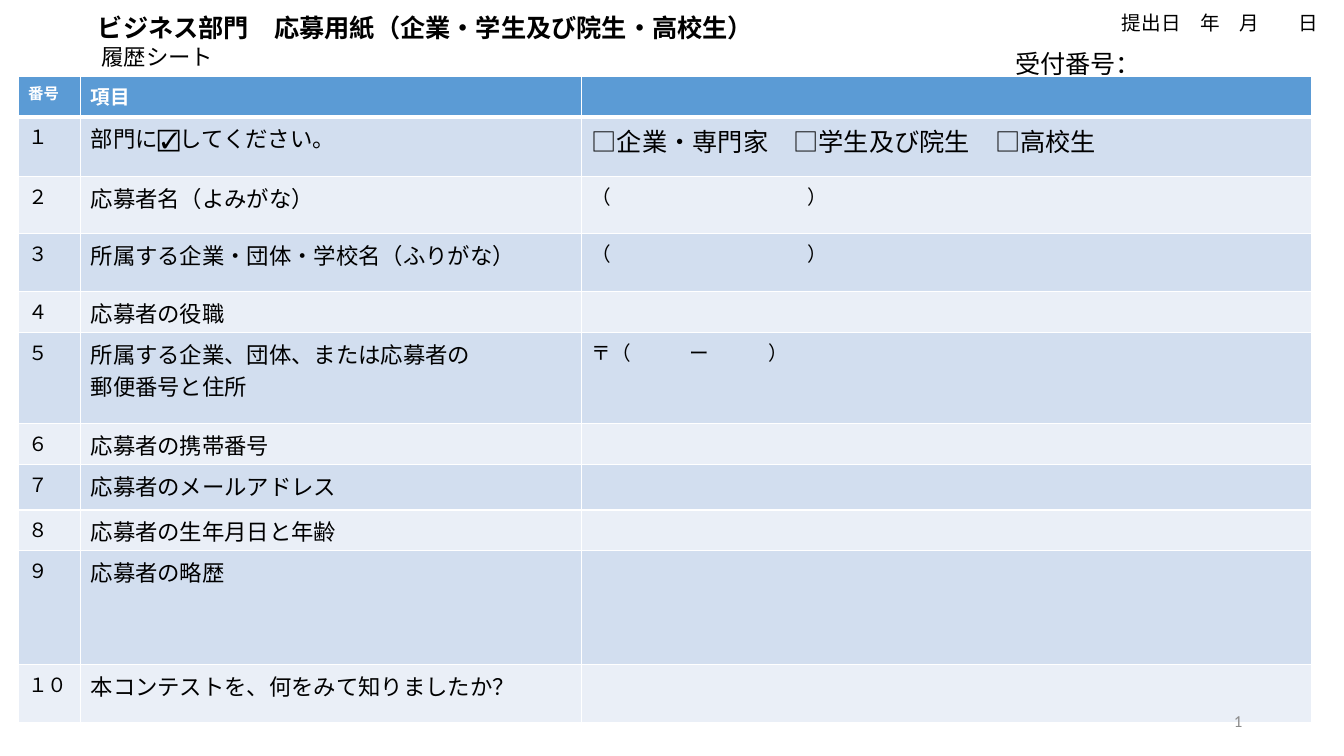
"""Build the résumé sheet of the business division application form."""
from pptx import Presentation
from pptx.dml.color import RGBColor
from pptx.enum.text import MSO_ANCHOR, PP_ALIGN
from pptx.oxml.ns import qn
from pptx.util import Inches, Pt
from lxml.etree import SubElement

BLACK = RGBColor(0x00, 0x00, 0x00)
WHITE = RGBColor(0xFF, 0xFF, 0xFF)
GRAY = RGBColor(0x8C, 0x8C, 0x8C)
HEADER_BLUE = RGBColor(0x5B, 0x9B, 0xD5)
BAND_DARK = RGBColor(0xD2, 0xDE, 0xEF)
BAND_LIGHT = RGBColor(0xEA, 0xEF, 0xF7)


def write(frame, text, size=14, color=BLACK, bold=False, align=PP_ALIGN.LEFT,
          anchor=MSO_ANCHOR.TOP, tabs=()):
    frame.word_wrap = True
    frame.vertical_anchor = anchor
    for index, line in enumerate(text.split("\n")):
        paragraph = frame.add_paragraph() if index else frame.paragraphs[0]
        paragraph.alignment = align
        if tabs:
            tab_list = SubElement(paragraph._p.get_or_add_pPr(), qn("a:tabLst"))
            for position in tabs:
                SubElement(tab_list, qn("a:tab"), pos=str(Inches(position)), algn="l")
        run = paragraph.add_run()
        run.text = line
        run.font.name = "Calibri"
        run.font.size = Pt(size)
        run.font.bold = bold
        run.font.color.rgb = color


def set_borders(cell, widths):
    properties = cell._tc.get_or_add_tcPr()
    for side, width in widths.items():
        line = SubElement(properties, qn(f"a:ln{side}"), w=str(Pt(width)))
        fill = SubElement(line, qn("a:solidFill"))
        SubElement(fill, qn("a:srgbClr"), val=str(WHITE))


presentation = Presentation()
presentation.slide_width = Inches(13.33)
presentation.slide_height = Inches(7.5)
slide = presentation.slides.add_slide(presentation.slide_layouts[5])

title = slide.shapes.title
title.left, title.top = Inches(0.62), Inches(0.07)
title.width, title.height = Inches(7.27), Inches(0.4)
write(title.text_frame, "　ビジネス部門　応募用紙（企業・学生及び院生・高校生）", size=18, bold=True)

labels = [
    (11.03, 0.06, 2.27, 0.34, "提出日　年　月\t日", {"tabs": [1.75]}),
    (9.97, 0.43, 1.34, 0.4, "受付番号：", {"size": 18}),
    (0.91, 0.38, 1.5, 0.37, "履歴シート", {"size": 16}),
]
for left, top, width, height, text, style in labels:
    box = slide.shapes.add_textbox(Inches(left), Inches(top), Inches(width), Inches(height))
    write(box.text_frame, text, **style)

column_widths = [0.62, 4.97, 7.24]
reading = ("（\t）", {"tabs": [2.14]})
empty = ("", {})
form_rows = [
    (0.39, "番号", "項目", empty),
    (0.59, "１", "部門に☑してください。", ("□企業・専門家　□学生及び院生　□高校生", {"size": 18})),
    (0.57, "２", "応募者名（よみがな）", reading),
    (0.57, "３", "所属する企業・団体・学校名（ふりがな）", reading),
    (0.41, "４", "応募者の役職", empty),
    (0.9, "５", "所属する企業、団体、または応募者の\n郵便番号と住所",
     ("〒（\tー\t）", {"tabs": [0.97, 1.75]})),
    (0.41, "６", "応募者の携帯番号", empty),
    (0.45, "７", "応募者のメールアドレス", empty),
    (0.4, "８", "応募者の生年月日と年齢", empty),
    (1.13, "９", "応募者の略歴", empty),
    (0.58, "１０", "本コンテストを、何をみて知りましたか？", empty),
]
table = slide.shapes.add_table(
    len(form_rows), len(column_widths), Inches(0.18), Inches(0.76),
    Inches(sum(column_widths)), Inches(sum(row[0] for row in form_rows))).table
for column, width in zip(table.columns, column_widths):
    column.width = Inches(width)

for row_index, (height, number, item, (answer, answer_style)) in enumerate(form_rows):
    table.rows[row_index].height = Inches(height)
    is_header = row_index == 0
    if is_header:
        fill_color = HEADER_BLUE
        header_style = {"color": WHITE, "bold": True}
        contents = [(number, {"size": 11, **header_style}), (item, header_style), empty]
    else:
        fill_color = BAND_DARK if row_index % 2 else BAND_LIGHT
        contents = [(number, {}), (item, {"size": 16}), (answer, answer_style)]
    for column_index, (text, style) in enumerate(contents):
        cell = table.cell(row_index, column_index)
        set_borders(cell, {"L": 1, "R": 1, "T": 3 if row_index == 1 else 1,
                           "B": 3 if is_header else 1})
        cell.fill.solid()
        cell.fill.fore_color.rgb = fill_color
        write(cell.text_frame, text, **style)

page_number = slide.shapes.add_textbox(Inches(9.42), Inches(6.95), Inches(3), Inches(0.4))
write(page_number.text_frame, "1", size=12, color=GRAY,
      align=PP_ALIGN.RIGHT, anchor=MSO_ANCHOR.MIDDLE)

presentation.save("out.pptx")
